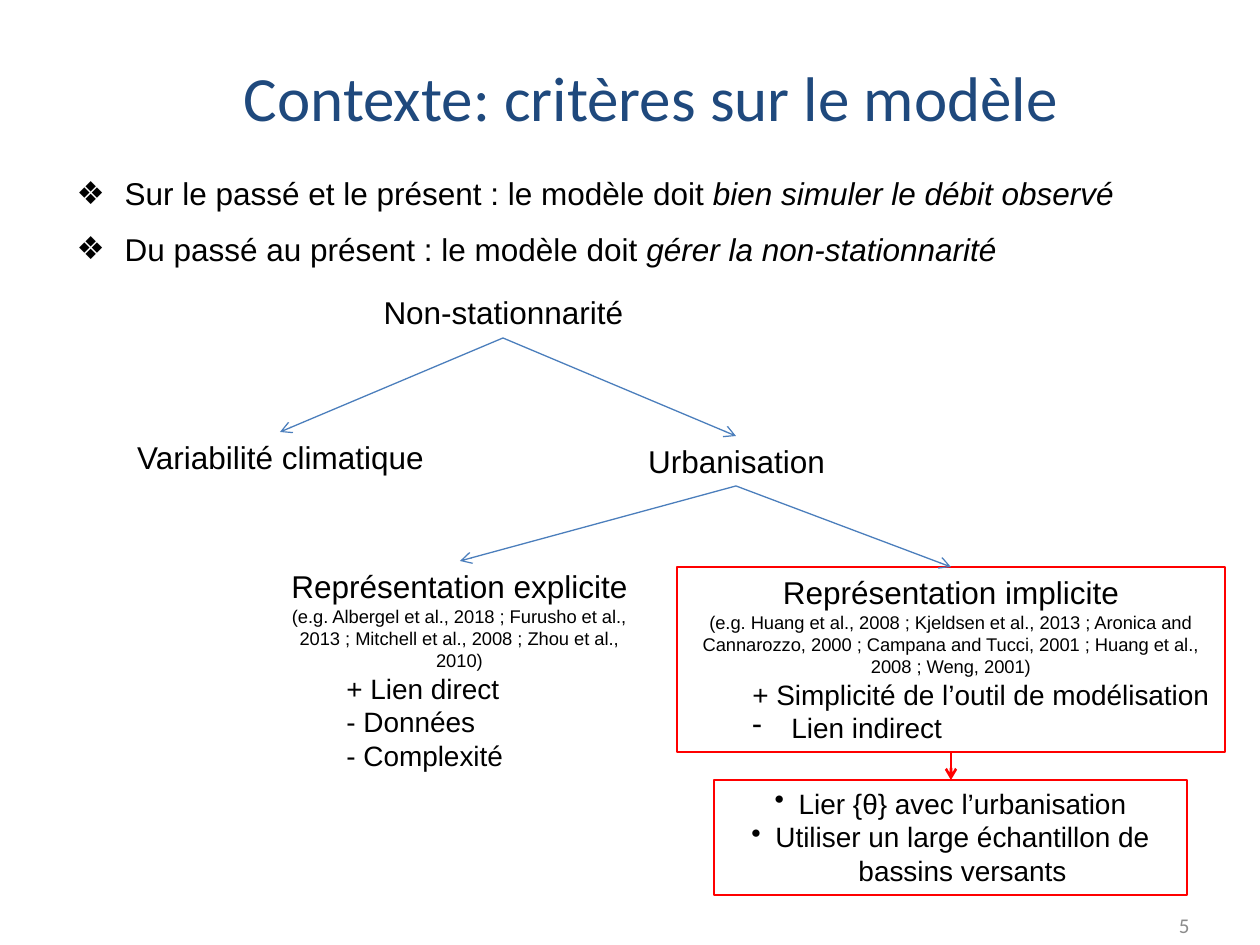
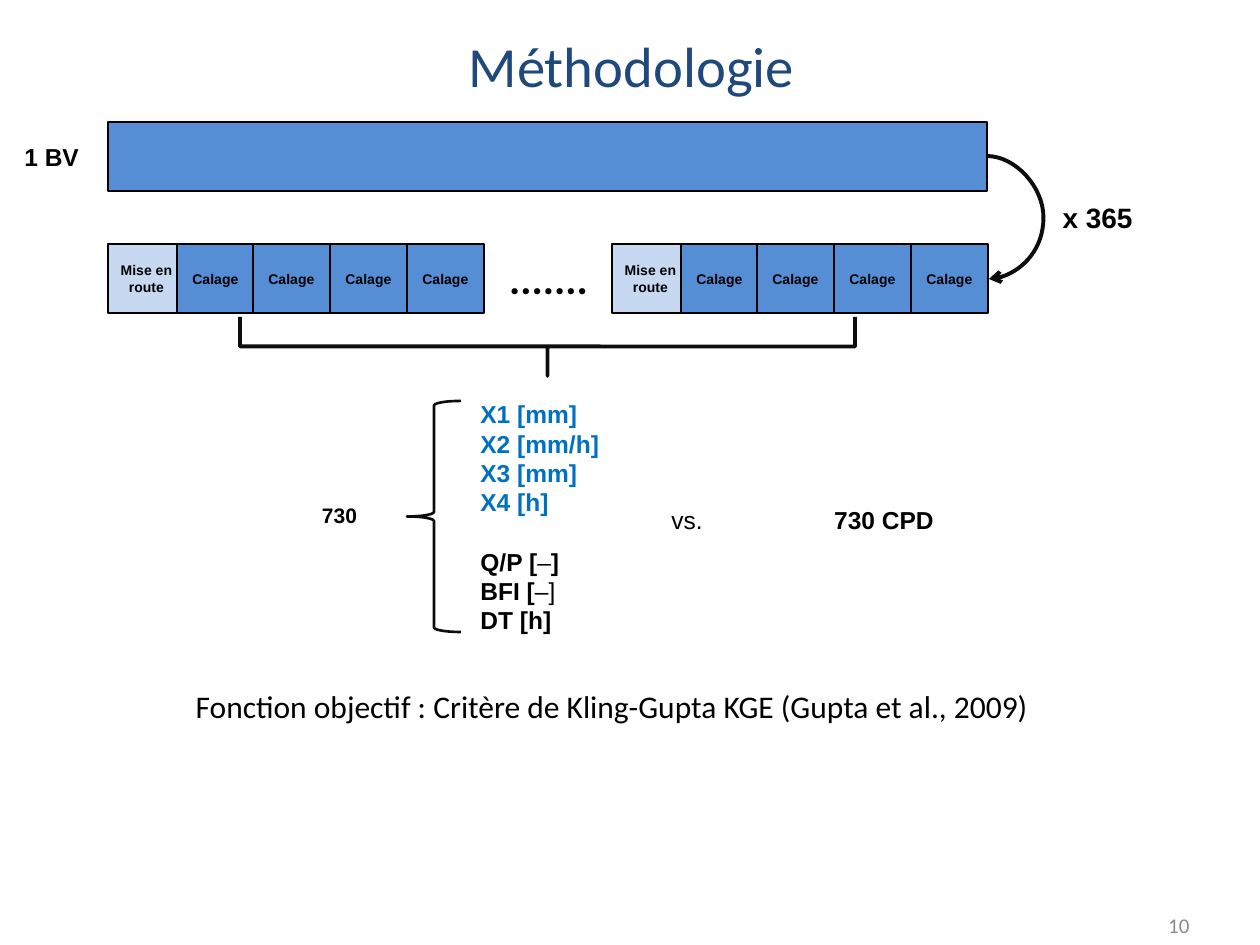
from lxml import etree
from pptx import Presentation
from pptx.dml.color import RGBColor
from pptx.enum.shapes import MSO_CONNECTOR, MSO_SHAPE
from pptx.enum.text import MSO_ANCHOR, MSO_AUTO_SIZE, PP_ALIGN
from pptx.oxml.ns import qn
from pptx.util import Pt

PX = 914400 // 126
LEFT, CENTER, RIGHT, JUSTIFY = PP_ALIGN.LEFT, PP_ALIGN.CENTER, PP_ALIGN.RIGHT, PP_ALIGN.JUSTIFY
TOP, MIDDLE = MSO_ANCHOR.TOP, MSO_ANCHOR.MIDDLE
RECTANGLE, LEFT_BRACE, RIGHT_BRACE = MSO_SHAPE.RECTANGLE, MSO_SHAPE.LEFT_BRACE, MSO_SHAPE.RIGHT_BRACE
STRAIGHT, CURVE = MSO_CONNECTOR.STRAIGHT, MSO_CONNECTOR.CURVE

BLACK, INK, GREY, RED = "000000", "0D0D0D", "8C8C8C", "FF0000"
TITLE_BLUE, ARROW_BLUE, PARAMETER_BLUE = "1F497D", "4B7EBC", "0070C0"
BAR_BLUE, PALE_BLUE, WHITE = "558ED5", "C6D9F1", "FFFFFF"

color_of = RGBColor.from_string


def write(frame, text, size=18, font="Arial", color=BLACK, bold=False, align=CENTER,
          before=0, after=0, margin=0, hanging=0, bullet=None, odd_style=None):
    """Add a paragraph; a list of texts makes spans, every second one in odd_style."""
    para = frame.add_paragraph() if frame.text else frame.paragraphs[0]
    para.alignment = align
    para.space_before, para.space_after = Pt(before), Pt(after)
    properties = para._p.get_or_add_pPr()
    properties.set("marL", str(margin * PX))
    properties.set("indent", str(-hanging * PX))
    if bullet:
        etree.SubElement(properties, qn("a:buChar")).set("char", bullet)
    for index, part in enumerate([text] if isinstance(text, str) else text):
        span = para.add_run()
        span.text = part
        span.font.name, span.font.size, span.font.bold = font, Pt(size), bold
        span.font.color.rgb = color_of(color)
        if index % 2:
            for name, value in odd_style.items():
                setattr(span.font, name, value)


def add_box(page, left, top, width, height, kind=RECTANGLE, fill=None, line=None,
            weight=1, anchor=TOP):
    box = page.shapes.add_shape(kind, left * PX, top * PX, width * PX, height * PX)
    box.shadow.inherit = False
    if fill:
        box.fill.solid()
        box.fill.fore_color.rgb = color_of(fill)
    else:
        box.fill.background()
    if line:
        box.line.color.rgb = color_of(line)
        box.line.width = Pt(weight)
    else:
        box.line.fill.background()
    box.text_frame.word_wrap = True
    box.text_frame.vertical_anchor = anchor
    return box


deck = Presentation()
deck.slide_width, deck.slide_height = 1260 * PX, 945 * PX

# Titles and page numbers
pages = []
for layout, title, size, place, number in [
    (1, "Contexte: critères sur le modèle", 36, (105, 38, 1092, 117), "5"),
    (5, "Méthodologie", 32.4, (96, 26, 1071, 77), "10"),
]:
    page = deck.slides.add_slide(deck.slide_layouts[layout])
    heading = page.shapes.title
    heading.left, heading.top, heading.width, heading.height = [value * PX for value in place]
    heading.text_frame.auto_size = MSO_AUTO_SIZE.NONE
    heading.text_frame.vertical_anchor = MIDDLE
    write(heading.text_frame, title, size=size, font="Calibri", color=TITLE_BLUE)
    footer = add_box(page, 1126, 908, 76, 34, anchor=MIDDLE)
    write(footer.text_frame, number, size=12, font="Calibri", color=GREY, align=RIGHT)
    pages.append(page)
context, method = pages

# Context: criteria list
criteria = context.placeholders[1]
criteria.left, criteria.top, criteria.width, criteria.height = 64 * PX, 168 * PX, 1110 * PX, 475 * PX
criteria.text_frame.auto_size = MSO_AUTO_SIZE.NONE
for index, sentence in enumerate([
    ["Sur le passé et le présent : le modèle doit ", "bien simuler le débit observé"],
    ["Du passé au présent : le modèle doit ", "gérer la non-stationnarité"],
]):
    write(criteria.text_frame, sentence, align=JUSTIFY, before=4 * index, after=6,
          margin=48, hanging=48, bullet="❖", odd_style={"italic": True})

# Context: tree
for text, left, top in [
    ("Non-stationnarité", 315, 287),
    ("Variabilité climatique", 92, 432),
    ("Urbanisation", 548, 436),
]:
    write(add_box(context, left, top, 377, 50).text_frame, text)

explicit = add_box(context, 271, 561, 377, 219).text_frame
implicit = add_box(context, 677, 567, 548, 185, line=RED, weight=1.5).text_frame
for frame, name, sources in [
    (explicit, "Représentation explicite",
     "(e.g. Albergel et al., 2018 ; Furusho et al., 2013 ; Mitchell et al., 2008 ; "
     "Zhou et al., 2010)"),
    (implicit, "Représentation implicite",
     "(e.g. Huang et al., 2008 ; Kjeldsen et al., 2013 ; Aronica and Cannarozzo, 2000 ; "
     "Campana and Tucci, 2001 ; Huang et al., 2008 ; Weng, 2001)"),
]:
    write(frame, name)
    write(frame, sources, size=10.5)
for point in ["+ Lien direct", "- Données", "- Complexité"]:
    write(explicit, point, size=16, align=LEFT, margin=63)
write(implicit, "+ Simplicité de l’outil de modélisation", size=16, align=LEFT, margin=63)
write(implicit, "Lien indirect", size=16, align=LEFT, margin=102, hanging=39, bullet="-")

goals = add_box(context, 714, 780, 473, 115, line=RED, weight=1.5).text_frame
for goal in ["Lier {θ} avec l’urbanisation", "Utiliser un large échantillon de bassins versants"]:
    write(goals, goal, size=16, margin=24, hanging=24, bullet="•")

# Method: time series and its calibration periods
add_box(method, 108, 122, 879, 69, fill=BAR_BLUE, line=BLACK)
dots = add_box(method, 469, 243, 159, 69, line=WHITE, weight=2, anchor=MIDDLE)
write(dots.text_frame, ".......", size=24, font="Calibri", bold=True)
for start in (108, 612):
    periods = [(start, "Mise en route", PALE_BLUE)]
    periods += [(start + 69 + 230 * index // 3, "Calage", BAR_BLUE) for index in range(4)]
    for left, text, fill in periods:
        period = add_box(method, left, 244, 77, 69, fill=fill, line=BLACK, anchor=MIDDLE)
        write(period.text_frame, text, size=8, bold=True)

# Method: braces
bracket = add_box(method, 518, 39, 59, 615, kind=RIGHT_BRACE, line=INK, weight=2.25)
bracket.rotation = 90
bracket.adjustments[0], bracket.adjustments[1] = 0, 0.5
add_box(method, 407, 401, 54, 231, kind=LEFT_BRACE, line=INK, weight=1.5)

# Method: labels
for text, place, style in [
    ("x 365", (1028, 194, 139, 47), {"size": 16, "bold": True}),
    ("1 BV", (12, 136, 104, 43), {"size": 14, "bold": True, "align": LEFT}),
    ("730", (292, 496, 95, 38), {"size": 12, "bold": True}),
    ("vs.", (655, 499, 64, 43), {"size": 14}),
    ("730 CPD", (729, 499, 310, 43), {"size": 14, "bold": True}),
    ("Fonction objectif : Critère de Kling-Gupta KGE (Gupta et al., 2009)",
     (96, 681, 1032, 50), {"font": "Calibri"}),
]:
    write(add_box(method, *place).text_frame, text, **style)

descriptors = add_box(method, 468, 393, 155, 255).text_frame
for text in ["X1 [mm]", "X2 [mm/h]", "X3 [mm]", "X4 [h]"]:
    write(descriptors, text, size=14, bold=True, color=PARAMETER_BLUE, align=LEFT)
for text, gap in [(["Q/P [", "–", "]"], 17), (["BFI [", "–]"], 0), ("DT [h]", 0)]:
    write(descriptors, text, size=14, bold=True, align=LEFT, before=gap,
          odd_style={"bold": False})

# Arrows
for page, kind, points, color, weight in [
    (context, STRAIGHT, (503, 338, 280, 432), ARROW_BLUE, 0.75),
    (context, STRAIGHT, (503, 338, 736, 436), ARROW_BLUE, 0.75),
    (context, STRAIGHT, (736, 486, 460, 561), ARROW_BLUE, 0.75),
    (context, STRAIGHT, (736, 486, 951, 567), ARROW_BLUE, 0.75),
    (context, STRAIGHT, (951, 752, 951, 780), RED, 1.5),
    (method, CURVE, (987, 156, 989, 279), INK, 2.25),
]:
    arrow = page.shapes.add_connector(kind, *[value * PX for value in points])
    arrow.line.color.rgb = color_of(color)
    arrow.line.width = Pt(weight)
    properties = arrow._element.spPr
    etree.SubElement(properties.find(qn("a:ln")), qn("a:tailEnd")).set("type", "arrow")
    etree.SubElement(properties, qn("a:effectLst"))
    if kind == CURVE:
        guide = etree.SubElement(properties.find(qn("a:prstGeom")).find(qn("a:avLst")), qn("a:gd"))
        guide.set("name", "adj1")
        guide.set("fmla", "val 2850000")

deck.save("out.pptx")
